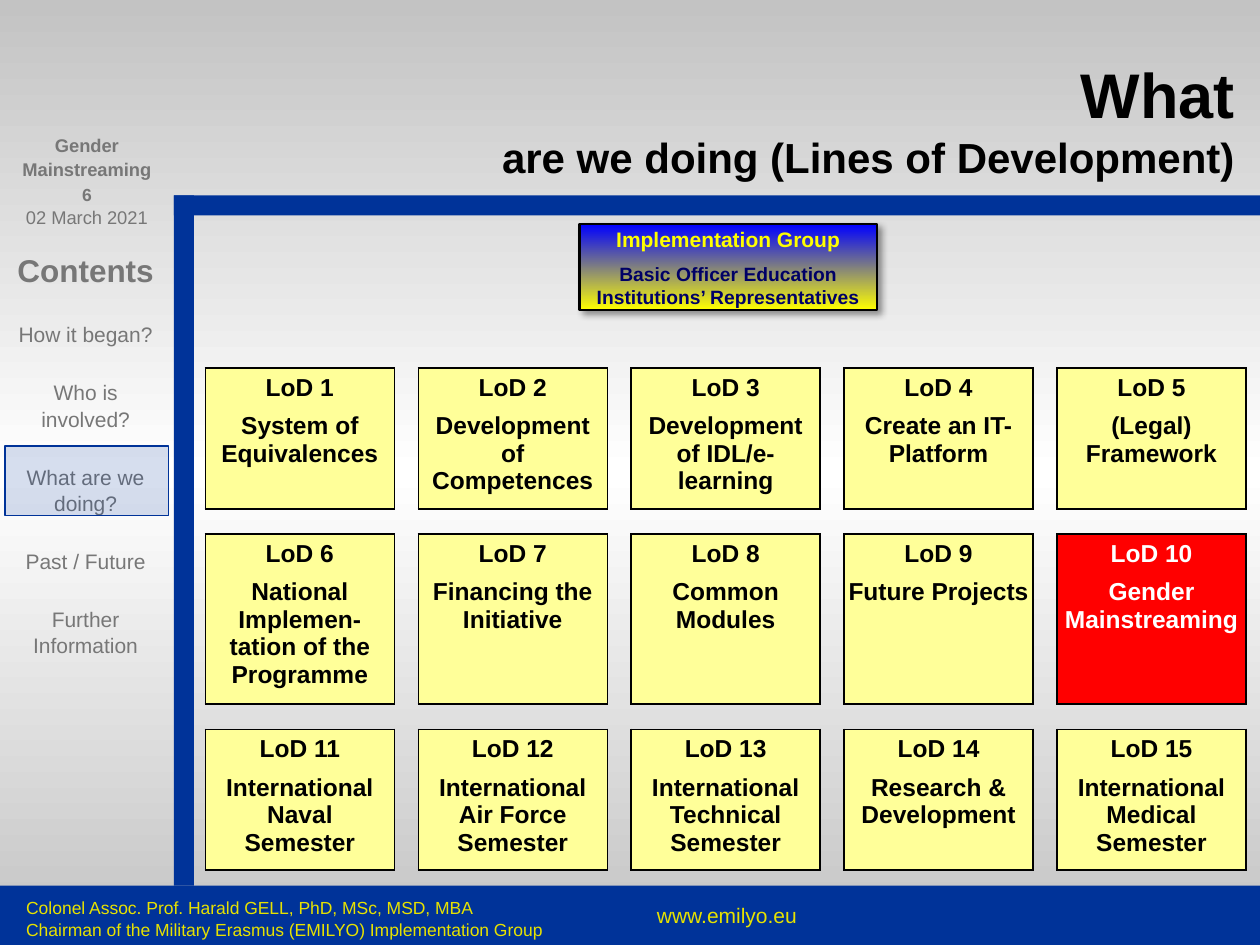
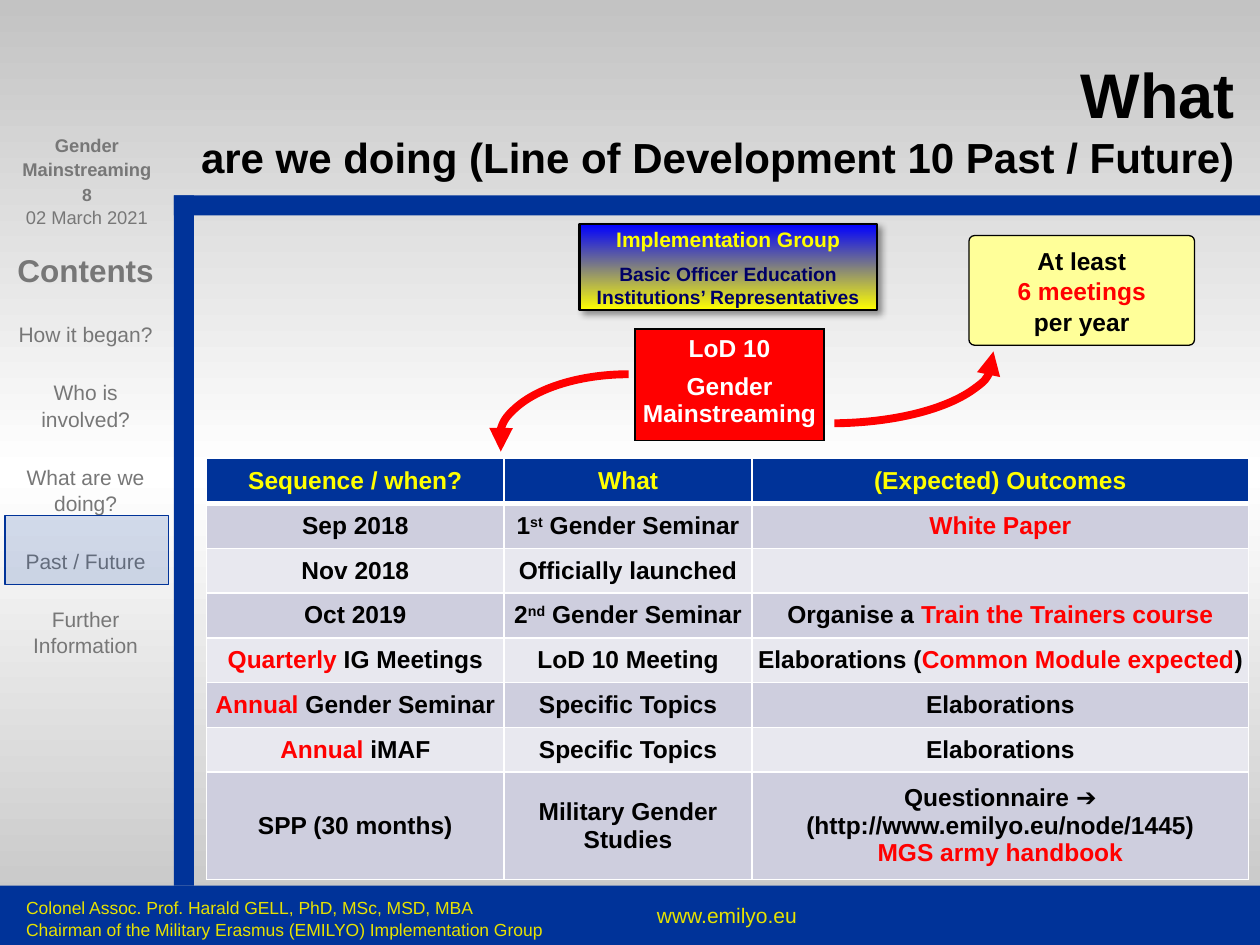
"""Build two slides on the Lines of Development and the gender mainstreaming plan."""
from copy import deepcopy

from lxml.etree import SubElement
from pptx import Presentation
from pptx.dml.color import RGBColor
from pptx.enum.shapes import MSO_SHAPE
from pptx.enum.text import MSO_ANCHOR, PP_ALIGN
from pptx.oxml.ns import qn
from pptx.util import Inches, Pt

NAVY = RGBColor(0x00, 0x33, 0x99)
DARK = RGBColor(0x00, 0x00, 0x66)
BLUE = RGBColor(0x00, 0x00, 0xFF)
YELLOW = RGBColor(0xFF, 0xFF, 0x00)
GOLD = RGBColor(0xE7, 0xE2, 0x00)
CREAM = RGBColor(0xFF, 0xFF, 0x99)
RED = RGBColor(0xFF, 0x00, 0x00)
BLACK = RGBColor(0x00, 0x00, 0x00)
WHITE = RGBColor(0xFF, 0xFF, 0xFF)
GREY = RGBColor(0x77, 0x77, 0x77)
SILVER = RGBColor(0xC3, 0xC3, 0xC3)
BANDS = RGBColor(0xE8, 0xE8, 0xEF), RGBColor(0xCE, 0xCE, 0xDE)

FONT = "Arial"
NO_STYLE = "{2D5ABB26-0587-4C30-8999-92F81FD0307C}"
LOOSE = 1.05

TOPICS = ["How it began?", "Who is involved?", "What are we doing?",
          "Past / Future", "Further Information"]
AUTHOR = ["Colonel Assoc. Prof. Harald GELL, PhD, MSc, MSD, MBA",
          "Chairman of the Military Erasmus (EMILYO) Implementation Group"]
SITE = "www.emilyo.eu"
DATE = "02 March 2021"
GROUP = ["Implementation Group",
         "Basic Officer Education Institutions’ Representatives"]

LINES = ["System of Equivalences", "Development of Competences",
         "Development of IDL/e-learning", "Create an IT-Platform",
         "(Legal) Framework", "National Implemen-tation of the Programme",
         "Financing the Initiative", "Common Modules", "Future Projects",
         "Gender Mainstreaming", "International Naval Semester",
         "International Air Force Semester",
         "International Technical Semester", "Research & Development",
         "International Medical Semester"]
GENDER = 10

# Text between bars is red, text between carets is raised.
PLAN = [
    ("Sequence / when?", "What", "(Expected) Outcomes"),
    ("Sep 2018", "1^st^ Gender Seminar", "|White Paper|"),
    ("Nov 2018", "Officially launched", ""),
    ("Oct 2019", "2^nd^ Gender Seminar", "Organise a |Train the Trainers course|"),
    ("|Quarterly| IG Meetings", "LoD 10 Meeting",
     "Elaborations (|Common Module expected|)"),
    ("|Annual| Gender Seminar", "Specific Topics", "Elaborations"),
    ("|Annual| iMAF", "Specific Topics", "Elaborations"),
    ("SPP (30 months)", "Military Gender Studies",
     "Questionnaire ➔ (http://www.emilyo.eu/node/1445)\n|MGS army handbook|"),
]
MEETINGS = ["At least", "|6 meetings|", "per year"]


def write(frame, lines, size, color, bold=False, align=PP_ALIGN.CENTER,
          after=0, pitch=None):
    """Fill a text frame, one paragraph a line, and return the paragraphs."""
    frame.word_wrap = True
    for i, line in enumerate(lines):
        para = frame.paragraphs[0] if i == 0 else frame.add_paragraph()
        para.alignment = align
        para.space_after = Pt(after)
        if pitch:
            para.line_spacing = pitch
        font = para.font
        font.name, font.size, font.bold = FONT, Pt(size), bold
        font.color.rgb = color
        for j, part in enumerate(line.split("|")):
            for k, piece in enumerate(part.split("^")):
                if not piece:
                    continue
                run = para.add_run()
                run.text = piece
                if j % 2:
                    run.font.color.rgb = RED
                if k % 2:
                    run._r.get_or_add_rPr().set("baseline", "30000")
        if not line:
            SubElement(para._p, qn("a:endParaRPr"), sz=str(size * 100))
    return frame.paragraphs


def inset(item, side, top):
    """Set the inner margins of a frame or cell."""
    item.margin_left = item.margin_right = Inches(side)
    item.margin_top = item.margin_bottom = Inches(top)


def label(slide, x, y, w, h, side=0.1, top=0.05):
    """Add a text box and return its frame."""
    frame = slide.shapes.add_textbox(
        Inches(x), Inches(y), Inches(w), Inches(h)).text_frame
    inset(frame, side, top)
    return frame


def box(slide, x, y, w, h, fill=None, line=None, width=0.75,
        kind=MSO_SHAPE.RECTANGLE):
    """Add a flat preset shape."""
    shape = slide.shapes.add_shape(
        kind, Inches(x), Inches(y), Inches(w), Inches(h))
    shape.shadow.inherit = False
    if fill is None:
        shape.fill.background()
    else:
        shape.fill.solid()
        shape.fill.fore_color.rgb = fill
    if line is None:
        shape.line.fill.background()
    else:
        shape.line.color.rgb = line
        shape.line.width = Pt(width)
    return shape


def grade(fill, node, colors):
    """Give a fill an evenly spaced gradient from top to bottom."""
    fill.gradient()
    fill.gradient_angle = 270
    stops = node.find(".//" + qn("a:gsLst"))
    for _ in colors[2:]:
        stops.insert(1, deepcopy(stops[0]))
    for i, (stop, color) in enumerate(zip(fill.gradient_stops, colors)):
        stop.position = i / (len(colors) - 1)
        stop.color.rgb = color


def grid(slide, x, y, widths, heights):
    """Add a plain table with the given column widths and row heights."""
    frame = slide.shapes.add_table(
        len(heights), len(widths), Inches(x), Inches(y),
        Inches(sum(widths)), Inches(sum(heights)))
    frame._element.find(".//" + qn("a:tableStyleId")).text = NO_STYLE
    table = frame.table
    table.first_row = table.horz_banding = False
    for col, width in zip(table.columns, widths):
        col.width = Inches(width)
    for row, height in zip(table.rows, heights):
        row.height = Inches(height)
    return table


def edge(cell, sides, color, width=1):
    """Draw the borders of a cell on the given sides, in L R T B order."""
    props = cell._tc.get_or_add_tcPr()
    for side in sides:
        line = SubElement(props, qn("a:ln" + side), w=str(Pt(width)))
        fill = SubElement(line, qn("a:solidFill"))
        SubElement(fill, qn("a:srgbClr"), val=str(color))


def paint(cell, lines, fill, color, after=0):
    """Fill a table cell with colour and bold text."""
    inset(cell, 0.03, 0.05)
    cell.fill.solid()
    cell.fill.fore_color.rgb = fill
    write(cell.text_frame, lines, 14, color, True, after=after)


def line_cell(cell, num):
    """Show one Line of Development in a cell."""
    hot = num == GENDER
    edge(cell, "LRTB", BLACK)
    paint(cell, [f"LoD {num}", LINES[num - 1]], RED if hot else CREAM,
          WHITE if hot else BLACK, 6)


def group(slide):
    """Add the Implementation Group box."""
    shape = box(slide, 4.6, 1.78, 2.36, 0.68, BLUE, BLACK, 1.25)
    grade(shape.fill, shape.element, [BLUE, YELLOW])
    glow = SubElement(shape.element.spPr.find(qn("a:effectLst")),
                      qn("a:outerShdw"), blurRad=str(Pt(4)), dist=str(Pt(3)),
                      dir="2700000", algn="tl", rotWithShape="0")
    tint = SubElement(glow, qn("a:srgbClr"), val=str(BLACK))
    SubElement(tint, qn("a:alpha"), val="40000")
    shape.text_frame.vertical_anchor = MSO_ANCHOR.MIDDLE
    name, body = write(shape.text_frame, GROUP, 12, YELLOW, True, after=6)
    body.font.size = Pt(11)
    body.font.color.rgb = DARK


def arrow(slide, x, y, w, h, start, end):
    """Add a mirrored red arc with an arrowhead, angles in degrees."""
    arc = box(slide, x, y, w, h, None, RED, 4.5, MSO_SHAPE.ARC)
    arc.adjustments[0], arc.adjustments[1] = start * 0.6, end * 0.6
    props = arc.element.spPr
    props.find(qn("a:xfrm")).set("flipH", "1")
    SubElement(props.find(qn("a:ln")), qn("a:tailEnd"), type="triangle")


def base(deck, page, title, topic):
    """Add a slide with backdrop, bands, sidebar, footer and title."""
    slide = deck.slides.add_slide(deck.slide_layouts[6])
    grade(slide.background.fill, slide.element, [SILVER, WHITE, SILVER])
    box(slide, 1.38, 1.55, 0.16, 5.48, NAVY)
    box(slide, 1.38, 1.55, 8.62, 0.16, NAVY)
    box(slide, 0, 7.03, 10, 0.47, NAVY)

    menu = write(label(slide, 0.05, 1.94, 1.26, 5.04, 0.04, 0.04),
                 ["Contents"] + TOPICS, 12, GREY, after=18, pitch=LOOSE)
    menu[0].font.size, menu[0].font.bold = Pt(18), True
    write(label(slide, 4.88, 7.1, 1.78, 0.35), [SITE], 12, GOLD, pitch=LOOSE)
    write(label(slide, 0.11, 7.06, 4.6, 0.35), AUTHOR, 10, GOLD,
          align=PP_ALIGN.LEFT, pitch=LOOSE)

    head = write(label(slide, 0, 1.06, 1.38, 0.82, 0, 0),
                 ["Gender", "Mainstreaming", str(page), DATE], 10.5, GREY,
                 True, pitch=LOOSE)
    head[2].font.size, head[2].space_before = Pt(10), Pt(2)
    head[3].font.bold = False

    frame = label(slide, 1.38, 0.19, 8.42, 1.25, 0, 0)
    frame.vertical_anchor = MSO_ANCHOR.BOTTOM
    lead = write(frame, ["What", title], 24, BLACK, True, PP_ALIGN.RIGHT)[0]
    lead.font.size = Pt(36)

    mark = box(slide, 0.04, 2.44 + 0.55 * topic, 1.3, 0.55, NAVY, NAVY)
    tint = mark.element.spPr.find(qn("a:solidFill"))[0]
    SubElement(tint, qn("a:alpha"), val="16000")
    group(slide)
    return slide


def lines_slide(deck):
    """Show all Lines of Development as a grid of boxes."""
    slide = base(deck, 6, "are we doing (Lines of Development)", 2)
    widths = [1.5, 0.19] * 4 + [1.5]
    heights = [1.06, 0.2, 1.28, 0.2, 1.06]
    table = grid(slide, 1.63, 2.92, widths, heights)
    for r in range(len(heights)):
        for c in range(len(widths)):
            cell = table.cell(r, c)
            if r % 2 == c % 2 == 0:
                line_cell(cell, r // 2 * 5 + c // 2 + 1)
                continue
            inset(cell, 0, 0)
            write(cell.text_frame, [""], 8, BLACK)
            if r % 2 == 0:
                edge(cell, "LR", BLACK)
            elif c % 2 == 0:
                edge(cell, "TB", BLACK)


def plan_slide(deck):
    """Show the past and future steps of the gender line."""
    slide = base(deck, 8,
                 "are we doing (Line of Development 10 Past / Future)", 3)
    line_cell(grid(slide, 5.04, 2.61, [1.5], [0.84]).cell(0, 0), GENDER)

    heights = [2.49 / 7] * 7 + [0.85]
    table = grid(slide, 1.64, 3.64, [2.36, 1.97, 3.94], heights)
    for r, row in enumerate(PLAN):
        for c, text in enumerate(row):
            cell = table.cell(r, c)
            cell.vertical_anchor = MSO_ANCHOR.MIDDLE
            edge(cell, "LR", WHITE)
            edge(cell, "T", WHITE, 3 if r == 1 else 1)
            edge(cell, "B", WHITE, 3 if r == 0 else 1)
            paint(cell, text.split("\n"), BANDS[r % 2] if r else NAVY,
                  BLACK if r else YELLOW)

    arrow(slide, 3.96, 2.97, 2.06, 1.05, 270, 5)
    arrow(slide, 5.29, 2.31, 2.6, 1.05, 93.6, 182)
    note = box(slide, 7.69, 1.87, 1.79, 0.87, CREAM, BLACK,
               kind=MSO_SHAPE.ROUNDED_RECTANGLE)
    note.adjustments[0] = 0.05
    note.text_frame.vertical_anchor = MSO_ANCHOR.MIDDLE
    write(note.text_frame, MEETINGS, 14, BLACK, True, pitch=LOOSE)


def main():
    """Build and save the deck."""
    deck = Presentation()
    deck.slide_width, deck.slide_height = Inches(10), Inches(7.5)
    lines_slide(deck)
    plan_slide(deck)
    deck.save("out.pptx")


if __name__ == "__main__":
    main()
